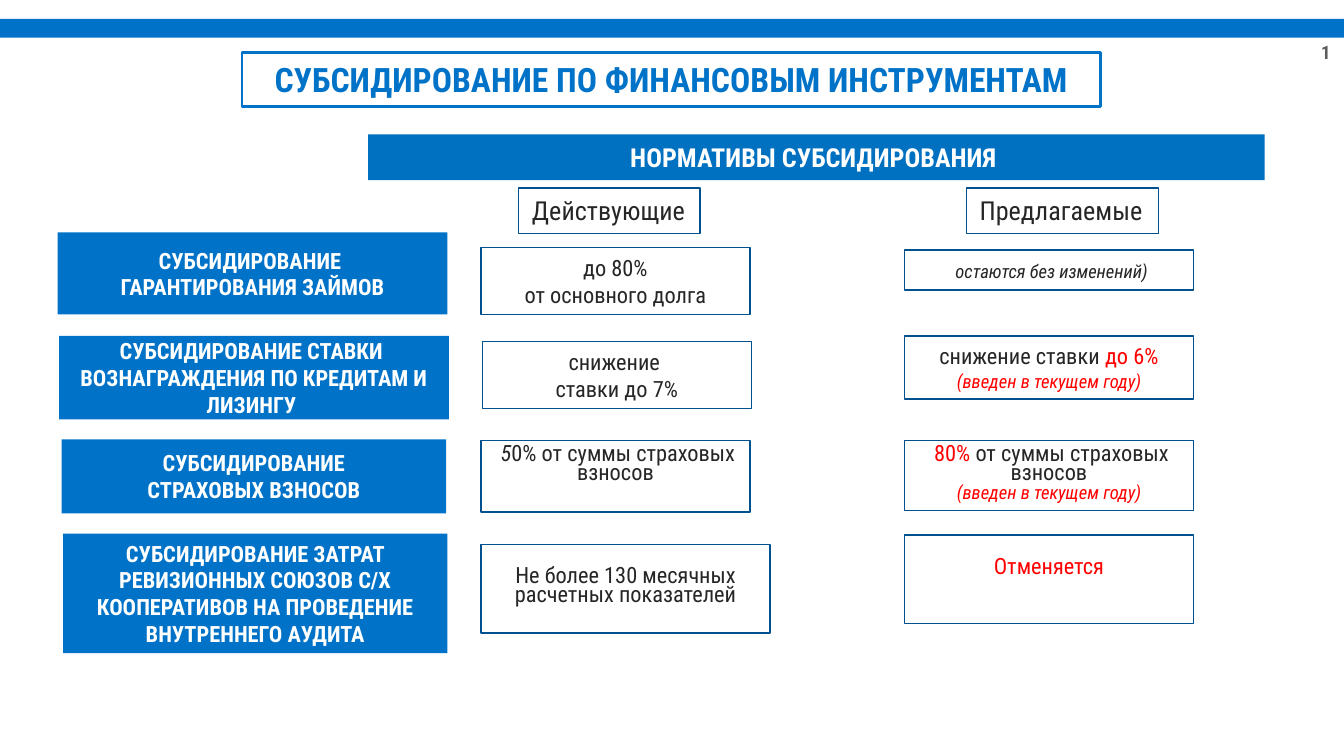
"""Build the slide on subsidy rates for financial instruments."""
from dataclasses import dataclass
from typing import NamedTuple, Optional

from pptx import Presentation
from pptx.dml.color import RGBColor
from pptx.enum.shapes import MSO_SHAPE
from pptx.enum.text import MSO_ANCHOR, PP_ALIGN
from pptx.util import Inches, Pt

FONT = "Roboto Condensed"
BLUE, HEADER_BLUE, OUTLINE = "0073C8", "0070C0", "00518E"
DARK, RED, WHITE, GREY = "262626", "FF0000", "FFFFFF", "5C5C5C"
SLIDE_WIDTH = 10
SLIDE_HEIGHT = SLIDE_WIDTH * 9 / 16
CURRENT_LEFT, PROPOSED_LEFT, PROPOSED_WIDTH = 3.58, 6.73, 2.15
TIGHT = 10


class Box(NamedTuple):
    left: float
    top: float
    width: float
    height: float


class Run(NamedTuple):
    text: str
    color: str = DARK
    size: float = 12
    italic: bool = False


@dataclass
class Cell:
    box: Box
    paragraphs: list[list[Run]]
    line_points: Optional[float] = None
    top_inset: float = 0.05


@dataclass
class Measure:
    label_box: Box
    label: list[str]
    current: Cell
    proposed: Cell


def rgb(color: str) -> RGBColor:
    """Turn a hex string into a colour."""
    return RGBColor.from_string(color)


def place(shape, box: Box) -> None:
    """Move and size a shape in inches."""
    shape.left, shape.top, shape.width, shape.height = map(Inches, box)


def write(shape, paragraphs: list[list[Run]], *, bold: bool = False, wrap: bool = True,
          align=PP_ALIGN.CENTER, anchor=MSO_ANCHOR.TOP,
          line_points: Optional[float] = None, top_inset: float = 0.05) -> None:
    """Fill a shape with formatted paragraphs."""
    frame = shape.text_frame
    frame.word_wrap = wrap
    frame.vertical_anchor = anchor
    frame.margin_left = frame.margin_right = Inches(0.1)
    frame.margin_top, frame.margin_bottom = Inches(top_inset), Inches(0.05)
    for index, runs in enumerate(paragraphs):
        paragraph = frame.add_paragraph() if index else frame.paragraphs[0]
        paragraph.alignment = align
        if line_points:
            paragraph.line_spacing = Pt(line_points)
        for part in runs:
            run = paragraph.add_run()
            run.text = part.text
            font = run.font
            font.name, font.size = FONT, Pt(part.size)
            font.bold, font.italic = bold, part.italic
            font.color.rgb = rgb(part.color)


def add_panel(slide, box: Box, fill: Optional[str] = None, line: Optional[str] = None):
    """Add a flat rectangle with an optional fill and outline."""
    panel = slide.shapes.add_shape(MSO_SHAPE.RECTANGLE, *map(Inches, box))
    panel.shadow.inherit = False
    if fill:
        panel.fill.solid()
        panel.fill.fore_color.rgb = rgb(fill)
    else:
        panel.fill.background()
    if line:
        panel.line.color.rgb = rgb(line)
        panel.line.width = Pt(0.75)
    else:
        panel.line.fill.background()
    return panel


def add_cell(slide, cell: Cell) -> None:
    """Add an outlined cell with its text."""
    write(add_panel(slide, cell.box, line=OUTLINE), cell.paragraphs,
          line_points=cell.line_points, top_inset=cell.top_inset)


def add_measure(slide, measure: Measure) -> None:
    """Add one row: label, current rate and proposed rate."""
    write(add_panel(slide, measure.label_box, BLUE),
          [[Run(text, WHITE)] for text in measure.label], bold=True, anchor=MSO_ANCHOR.MIDDLE)
    add_cell(slide, measure.current)
    add_cell(slide, measure.proposed)


def proposed(top: float, height: float, paragraphs: list[list[Run]], **layout) -> Cell:
    """Describe a cell in the proposed column."""
    return Cell(Box(PROPOSED_LEFT, top, PROPOSED_WIDTH, height), paragraphs, **layout)


INTRODUCED = [Run("(введен в текущем году)", RED, 10, True)]
MEASURES = [
    Measure(
        Box(0.43, 1.73, 2.9, 0.61), ["СУБСИДИРОВАНИЕ ", "ГАРАНТИРОВАНИЯ ЗАЙМОВ"],
        Cell(Box(CURRENT_LEFT, 1.84, 2, 0.5),
             [[Run(" ", italic=True), Run("до 80% ")], [Run("от основного долга")]]),
        proposed(1.86, 0.3, [[Run(" ", italic=True),
                              Run("остаются без изменений)", size=10, italic=True)]])),
    Measure(
        Box(0.44, 2.5, 2.9, 0.62),
        ["СУБСИДИРОВАНИЕ СТАВКИ ", "ВОЗНАГРАЖДЕНИЯ ПО КРЕДИТАМ И ЛИЗИНГУ "],
        Cell(Box(3.59, 2.54, 2, 0.5), [[Run("снижение ")], [Run("ставки до 7%")]]),
        proposed(2.5, 0.47, [[Run("снижение ставки "), Run("до 6%", RED)], INTRODUCED])),
    Measure(
        Box(0.46, 3.27, 2.86, 0.55), ["СУБСИДИРОВАНИЕ", "СТРАХОВЫХ ВЗНОСОВ"],
        Cell(Box(CURRENT_LEFT, 3.28, 2, 0.53),
             [[Run(" 5", italic=True), Run("0% от суммы страховых взносов")]], TIGHT),
        proposed(3.28, 0.52, [[Run(" ", italic=True), Run("80%", RED),
                               Run(" от суммы страховых взносов")],
                              INTRODUCED], line_points=TIGHT)),
    Measure(
        Box(0.47, 3.97, 2.86, 0.89),
        ["СУБСИДИРОВАНИЕ ЗАТРАТ РЕВИЗИОННЫХ СОЮЗОВ С/Х КООПЕРАТИВОВ НА ПРОВЕДЕНИЕ "
         "ВНУТРЕННЕГО АУДИТА"],
        Cell(Box(CURRENT_LEFT, 4.05, 2.15, 0.66),
             [[Run("Не более 130 месячных расчетных показателей")]], TIGHT, 0.19),
        proposed(3.98, 0.66, [[Run("Отменяется", RED)]], line_points=TIGHT, top_inset=0.19)),
]
COLUMN_HEADS = {
    "Действующие": Box(3.86, 1.4, 1.35, 0.34),
    "Предлагаемые": Box(7.19, 1.4, 1.43, 0.34),
}


def main() -> None:
    """Assemble and save the presentation."""
    deck = Presentation()
    deck.slide_width, deck.slide_height = Inches(SLIDE_WIDTH), Inches(SLIDE_HEIGHT)
    slide = deck.slides.add_slide(deck.slide_layouts[5])

    add_panel(slide, Box(0, 0.14, SLIDE_WIDTH, 0.14), BLUE)
    page_number = slide.shapes.add_textbox(*map(Inches, Box(9.69, 0.21, 0.35, 0.36)))
    write(page_number, [[Run("1", GREY, 10)]], bold=True, anchor=MSO_ANCHOR.MIDDLE)

    title = slide.shapes.title
    place(title, Box(1.8, 0.39, 6.39, 0.4))
    title.line.color.rgb = rgb(BLUE)
    title.line.width = Pt(1.5)
    write(title, [[Run("СУБСИДИРОВАНИЕ ПО ФИНАНСОВЫМ ИНСТРУМЕНТАМ", BLUE, 18)]], bold=True)

    rates_header = add_panel(slide, Box(2.74, 1, 6.67, 0.34), HEADER_BLUE)
    write(rates_header, [[Run("НОРМАТИВЫ СУБСИДИРОВАНИЯ ", WHITE, 14)]], bold=True)
    for heading, box in COLUMN_HEADS.items():
        write(add_panel(slide, box, line=OUTLINE), [[Run(heading, size=14)]],
              wrap=False, align=PP_ALIGN.LEFT)
    for measure in MEASURES:
        add_measure(slide, measure)

    deck.save("out.pptx")


if __name__ == "__main__":
    main()
